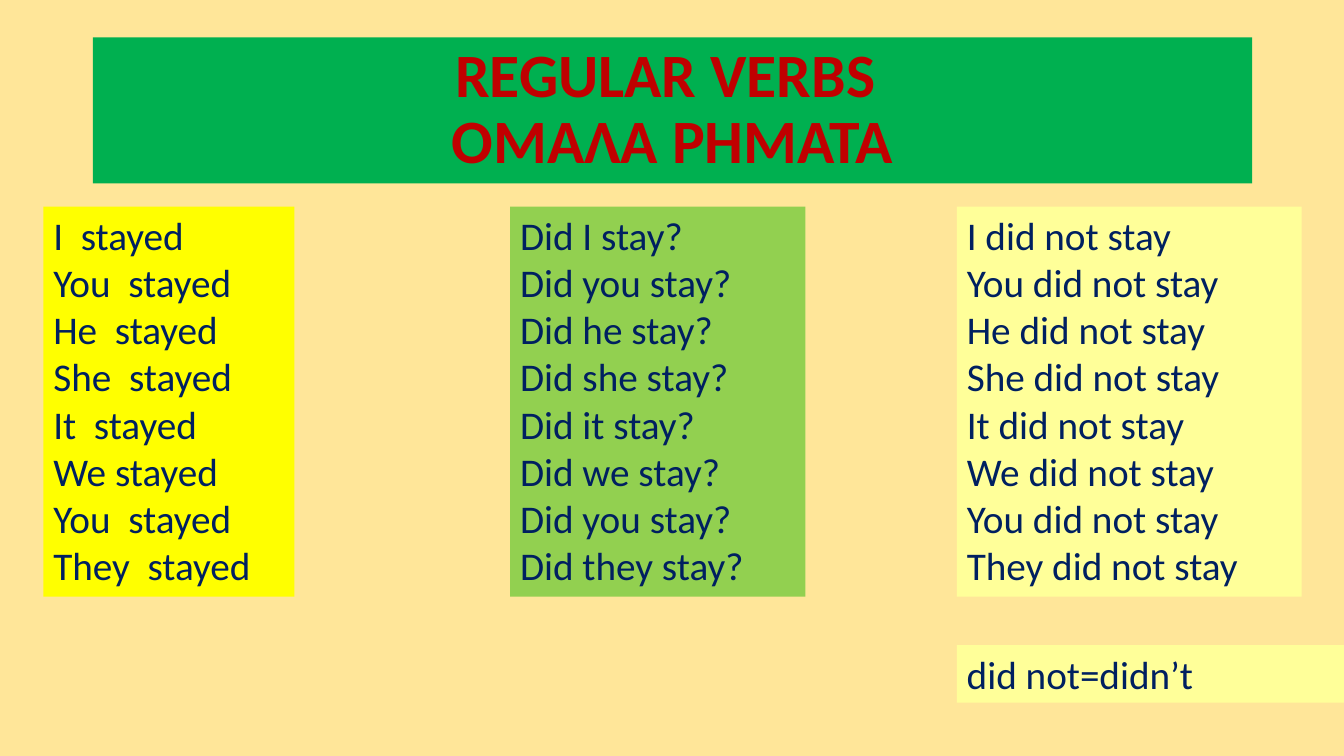
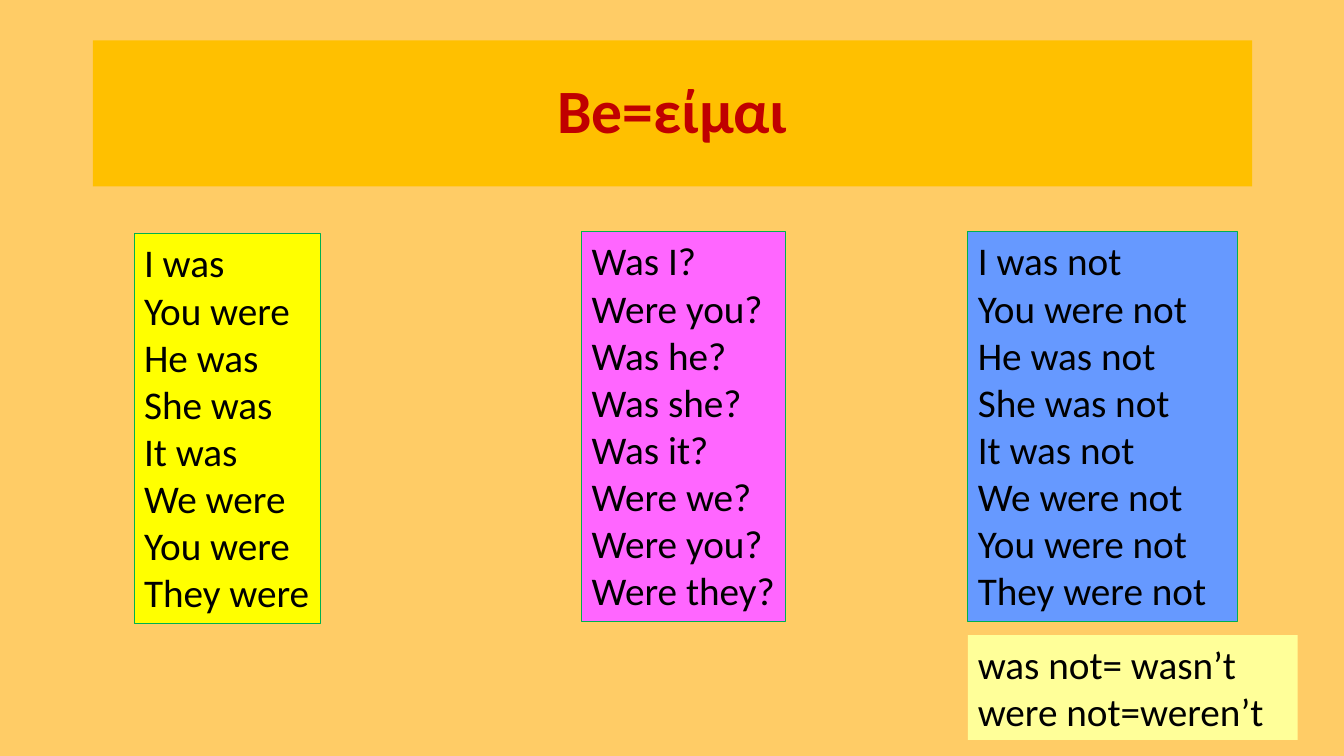
from dataclasses import dataclass

from pptx import Presentation
from pptx.dml.color import RGBColor
from pptx.enum.text import MSO_ANCHOR, MSO_AUTO_SIZE, PP_ALIGN
from pptx.util import Inches, Pt


@dataclass(frozen=True)
class Theme:
    font: str = "Calibri"
    title_size: int = 44
    body_size: int = 28
    title_ink: str = "C00000"
    navy: str = "002060"
    black: str = "000000"
    green: str = "00B050"
    lime: str = "92D050"
    yellow: str = "FFFF00"
    pale_yellow: str = "FFFF99"
    amber: str = "FFC000"
    pink: str = "FF66FF"
    blue: str = "6699FF"
    cream: str = "FFE699"
    apricot: str = "FFCC66"


THEME = Theme()
TITLE_LEFT, TITLE_WIDTH, TITLE_HEIGHT = 0.92, 11.5, 1.45
PANEL_HEIGHT = 3.87

LESSONS = [
    {
        "title": "REGULAR VERBS \vΟΜΑΛΑ ΡΗΜΑΤΑ",
        "title_top": 0.37,
        "band": THEME.green,
        "background": THEME.cream,
        "ink": THEME.navy,
        "outline": None,
        "forms": [
            (0.43, 2.05, 2.49, THEME.yellow,
             ["I  stayed", "You  stayed", "He  stayed", "She  stayed",
              "It  stayed", "We stayed", "You  stayed", "They  stayed"]),
            (5.06, 2.05, 2.93, THEME.lime,
             ["Did I stay?", "Did you stay?", "Did he stay?", "Did she stay?",
              "Did it stay?", "Did we stay?", "Did you stay?", "Did they stay?"]),
            (9.49, 2.05, 3.42, THEME.pale_yellow,
             ["I did not stay", "You did not stay", "He did not stay",
              "She did not stay", "It did not stay", "We did not stay",
              "You did not stay", "They did not stay"]),
        ],
        "short_forms": (9.49, 6.4, 3.84, 0.57, ["did not=didn’t"]),
    },
    {
        "title": "Be=είμαι",
        "title_top": 0.4,
        "band": THEME.amber,
        "background": THEME.apricot,
        "ink": THEME.black,
        "outline": THEME.green,
        "forms": [
            (1.33, 2.32, 1.85, THEME.yellow,
             ["I was", "You were", "He was", "She was",
              "It was", "We were", "You were", "They were"]),
            (5.77, 2.3, 2.02, THEME.pink,
             ["Was I?", "Were you?", "Was he?", "Was she?",
              "Was it?", "Were we?", "Were you?", "Were they?"]),
            (9.6, 2.3, 2.67, THEME.blue,
             ["I was not", "You were not", "He was not", "She was not",
              "It was not", "We were not", "You were not", "They were not"]),
        ],
        "short_forms": (9.6, 6.3, 3.27, 1.04,
                        ["was not= wasn’t", "were not=weren’t"]),
    },
]


def paint(fill, color):
    fill.solid()
    fill.fore_color.rgb = RGBColor.from_string(color)


def style(paragraph, size, color, bold=False):
    font = paragraph.font
    font.name = THEME.font
    font.size = Pt(size)
    font.bold = bold
    font.color.rgb = RGBColor.from_string(color)


def set_title(slide, lesson):
    title = slide.shapes.title
    title.left, title.top = Inches(TITLE_LEFT), Inches(lesson["title_top"])
    title.width, title.height = Inches(TITLE_WIDTH), Inches(TITLE_HEIGHT)
    paint(title.fill, lesson["band"])
    frame = title.text_frame
    frame.auto_size = MSO_AUTO_SIZE.NONE
    frame.vertical_anchor = MSO_ANCHOR.MIDDLE
    heading = frame.paragraphs[0]
    heading.text = lesson["title"]
    heading.alignment = PP_ALIGN.CENTER
    heading.line_spacing = 0.9
    style(heading, THEME.title_size, THEME.title_ink, bold=True)


def add_panel(slide, box, lines, color, ink, outline=None):
    panel = slide.shapes.add_textbox(*map(Inches, box))
    paint(panel.fill, color)
    if outline:
        panel.line.color.rgb = RGBColor.from_string(outline)
        panel.line.width = Pt(0.75)
    frame = panel.text_frame
    frame.word_wrap = True
    frame.auto_size = MSO_AUTO_SIZE.SHAPE_TO_FIT_TEXT
    frame.text = "\n".join(lines)
    for paragraph in frame.paragraphs:
        style(paragraph, THEME.body_size, ink)


def add_lesson(deck, lesson):
    slide = deck.slides.add_slide(deck.slide_layouts.get_by_name("Title Only"))
    paint(slide.background.fill, lesson["background"])
    set_title(slide, lesson)
    for left, top, width, color, lines in lesson["forms"]:
        add_panel(slide, (left, top, width, PANEL_HEIGHT), lines, color,
                  lesson["ink"], lesson["outline"])
    *box, lines = lesson["short_forms"]
    add_panel(slide, box, lines, THEME.pale_yellow, lesson["ink"])


def main():
    deck = Presentation()
    deck.slide_width, deck.slide_height = Inches(13.33), Inches(7.5)
    for lesson in LESSONS:
        add_lesson(deck, lesson)
    deck.save("out.pptx")


if __name__ == "__main__":
    main()
